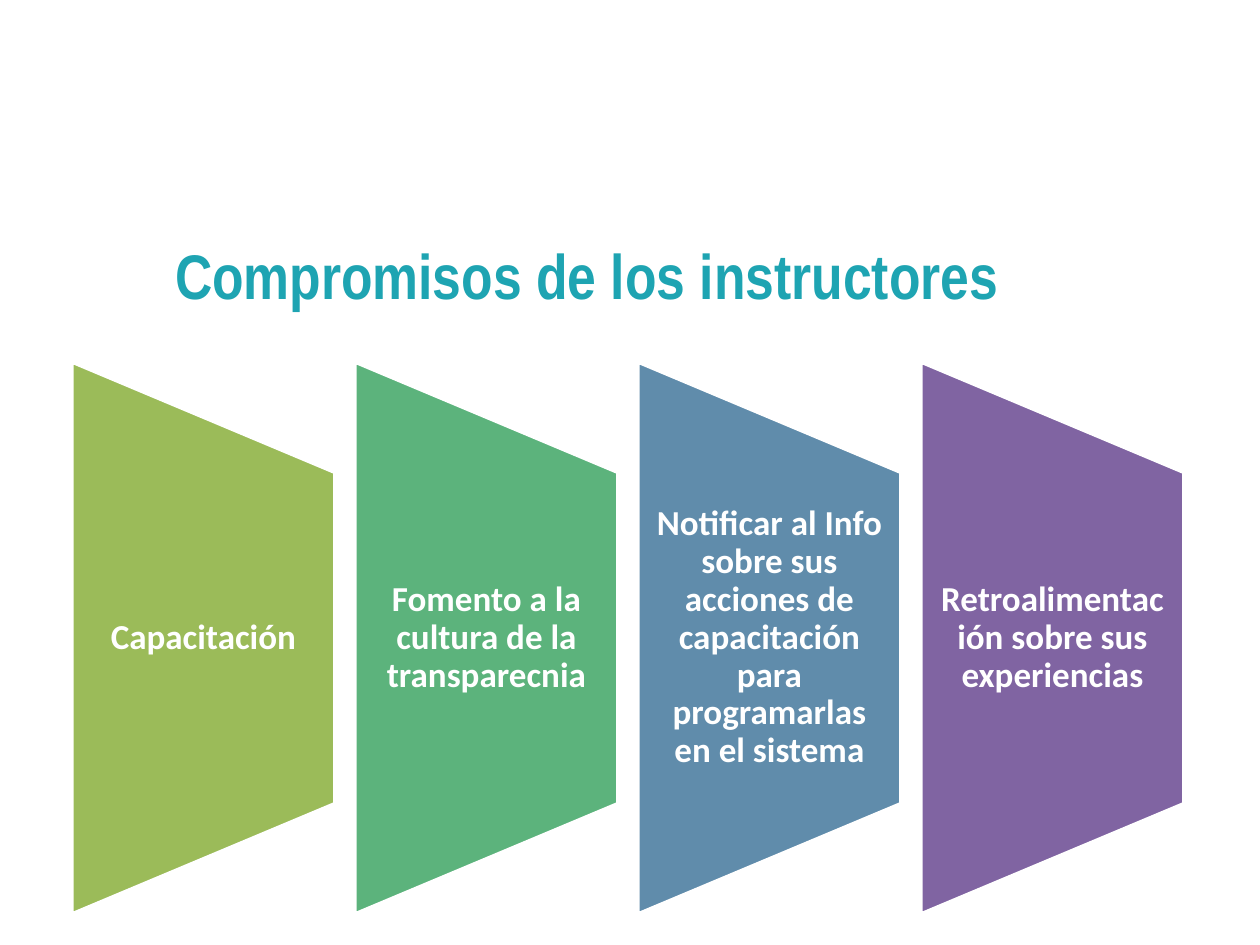
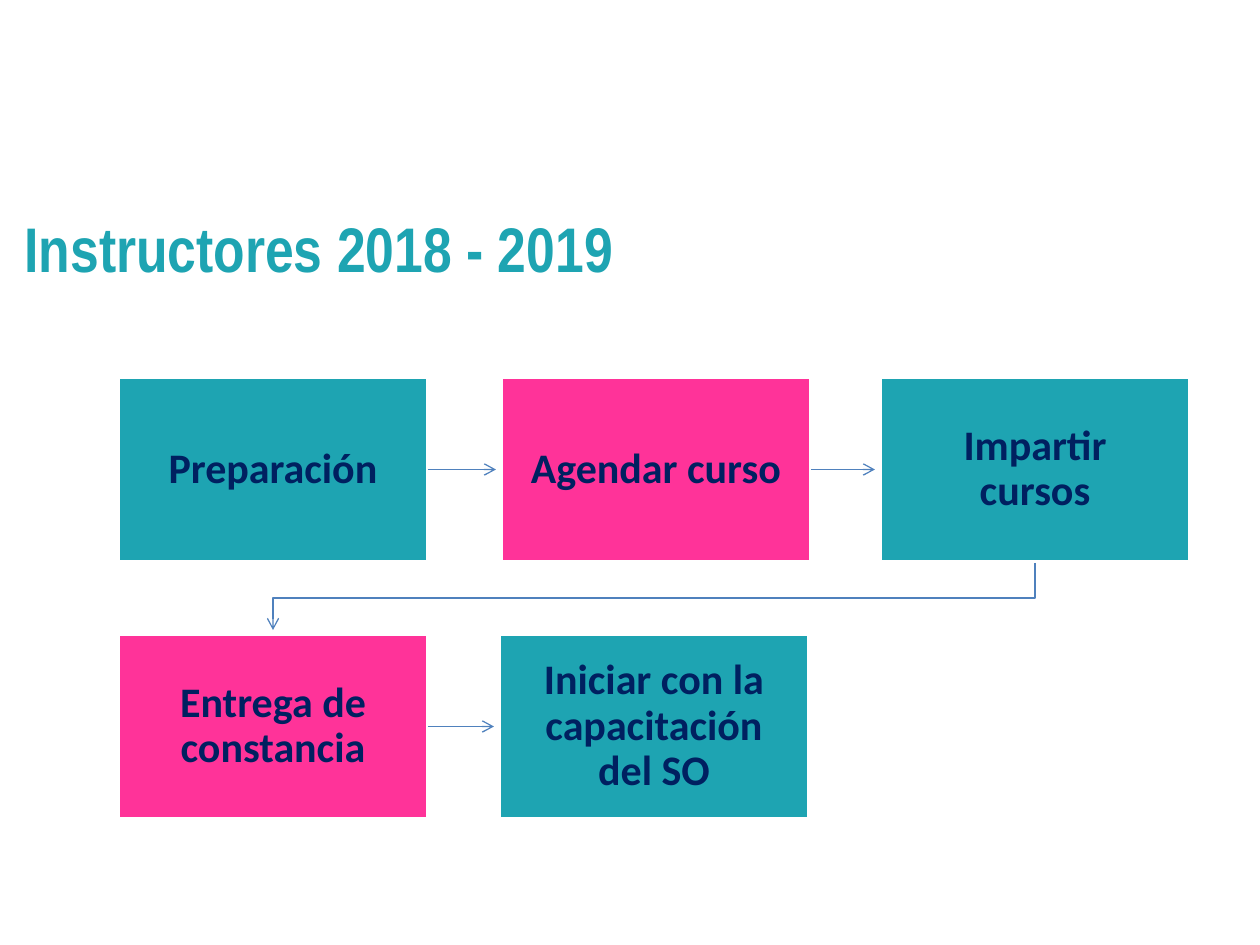
import pptx
import pptx.util
from pptx.dml.color import RGBColor
from pptx.enum.shapes import MSO_CONNECTOR, MSO_SHAPE
from pptx.enum.text import MSO_ANCHOR, PP_ALIGN
from pptx.oxml.ns import qn
from lxml import etree

PX_PER_INCH = 126
COLORS = {
    "white": "FFFFFF",
    "teal": "1EA4B2",
    "pink": "FF3399",
    "navy": "002060",
    "arrow": "4F81BD",
    "olive": "9BBB59",
    "green": "5CB37C",
    "blue": "608CAB",
    "purple": "8064A2",
}

COMMITMENTS = [
    ("Capacitación", "olive"),
    ("Fomento a la cultura de la transparecnia", "green"),
    ("Notificar al Info sobre sus acciones de capacitación para "
     "programarlas en el sistema", "blue"),
    ("Retroalimentación sobre sus experiencias", "purple"),
]
PANEL_LEFT, PANEL_STEP, PANEL_W, PANEL_H = 72, 283, 263, 552
PANEL_MIDDLE = 638

STEP_W, STEP_H = 310, 185
STEPS = [
    ("Preparación", 118, 377, "teal"),
    ("Agendar curso", 501, 377, "pink"),
    ("Impartir cursos", 880, 377, "teal"),
    ("Entrega de constancia", 118, 634, "pink"),
    ("Iniciar con la capacitación del SO", 499, 634, "teal"),
]


def px(n):
    return round(n * 914400 / PX_PER_INCH)


def rgb(name):
    return RGBColor.from_string(COLORS[name])


def write(sp, text, size, color, font="Calibri", inset=(0, 0),
          spacing=0.9, anchor=MSO_ANCHOR.MIDDLE):
    """Fill a shape with one centred bold paragraph; inset is (sides, top and bottom)."""
    tf = sp.text_frame
    tf.word_wrap = True
    tf.vertical_anchor = anchor
    tf.margin_left = tf.margin_right = px(inset[0])
    tf.margin_top = tf.margin_bottom = px(inset[1])
    p = tf.paragraphs[0]
    p.alignment = PP_ALIGN.CENTER
    p.line_spacing = spacing
    r = p.add_run()
    r.text = text
    r.font.name = font
    r.font.size = pptx.util.Pt(size)
    r.font.bold = True
    r.font.color.rgb = rgb(color)


def add_text(s, text, left, top, width, height, size, color, **style):
    sp = s.shapes.add_textbox(px(left), px(top), px(width), px(height))
    write(sp, text, size, color, **style)


def add_title(s, text, left, top):
    add_text(s, text, left, top, 1048, 89, 36, "teal", font="Arial Narrow",
             inset=(13, 6), spacing=1.0, anchor=MSO_ANCHOR.TOP)


def add_block(s, kind, left, top, width, height, fill):
    sp = s.shapes.add_shape(kind, px(left), px(top), px(width), px(height))
    sp.shadow.inherit = False
    sp.fill.solid()
    sp.fill.fore_color.rgb = rgb(fill)
    sp.line.color.rgb = rgb("white")
    sp.line.width = pptx.util.Pt(2)
    return sp


def add_panel(s, text, left, fill):
    """Add a trapezoid lying on its side, with upright text over it."""
    sp = add_block(s, MSO_SHAPE.FLOWCHART_MANUAL_OPERATION,
                   left + (PANEL_W - PANEL_H) / 2, PANEL_MIDDLE - PANEL_W / 2,
                   PANEL_H, PANEL_W, fill)
    sp.rotation = 270
    text_h = PANEL_H * 0.6
    add_text(s, text, left, PANEL_MIDDLE - text_h / 2, PANEL_W, text_h,
             20, "white", inset=(17, 0))


def add_step(s, text, left, top, fill):
    sp = add_block(s, MSO_SHAPE.RECTANGLE, left, top, STEP_W, STEP_H, fill)
    write(sp, text, 24, "navy", inset=(26, 24))


def style_arrow(sp):
    sp.line.color.rgb = rgb("arrow")
    sp.line.width = pptx.util.Pt(0.75)
    props = sp.element.spPr
    etree.SubElement(props.get_or_add_ln(), qn("a:tailEnd"), type="arrow")
    etree.SubElement(props, qn("a:effectLst"))


def add_arrow_right(s, start, end):
    _, left, top, _ = start
    y = px(top + STEP_H / 2)
    style_arrow(s.shapes.add_connector(
        MSO_CONNECTOR.STRAIGHT, px(left + STEP_W), y, px(end[1] - 5), y))


def add_arrow_to_next_row(s, start, end):
    x1, x2 = start[1] + STEP_W / 2, end[1] + STEP_W / 2
    y1, y2 = start[2] + STEP_H + 1, end[2] - 4
    bend = (start[2] + STEP_H + end[2]) / 2
    path = s.shapes.build_freeform(px(x1), px(y1))
    path.add_line_segments(
        [(px(x), px(y)) for x, y in ((x1, bend), (x2, bend), (x2, y2))],
        close=False)
    sp = path.convert_to_shape()
    sp.fill.background()
    style_arrow(sp)


def add_commitments_slide(prs):
    s = prs.slides.add_slide(prs.slide_layouts[6])
    add_title(s, "Compromisos de los instructores", 63, 231)
    for i, (text, fill) in enumerate(COMMITMENTS):
        add_panel(s, text, PANEL_LEFT + i * PANEL_STEP, fill)


def add_process_slide(prs):
    s = prs.slides.add_slide(prs.slide_layouts[6])
    add_title(s, "Instructores 2018 - 2019", -205, 204)
    for step in STEPS:
        add_step(s, *step)
    for start, end in zip(STEPS, STEPS[1:]):
        same_row = start[2] == end[2]
        (add_arrow_right if same_row else add_arrow_to_next_row)(s, start, end)


def main():
    prs = pptx.Presentation()
    prs.slide_width, prs.slide_height = px(1260), px(945)
    add_commitments_slide(prs)
    add_process_slide(prs)
    prs.save("out.pptx")


if __name__ == "__main__":
    main()
